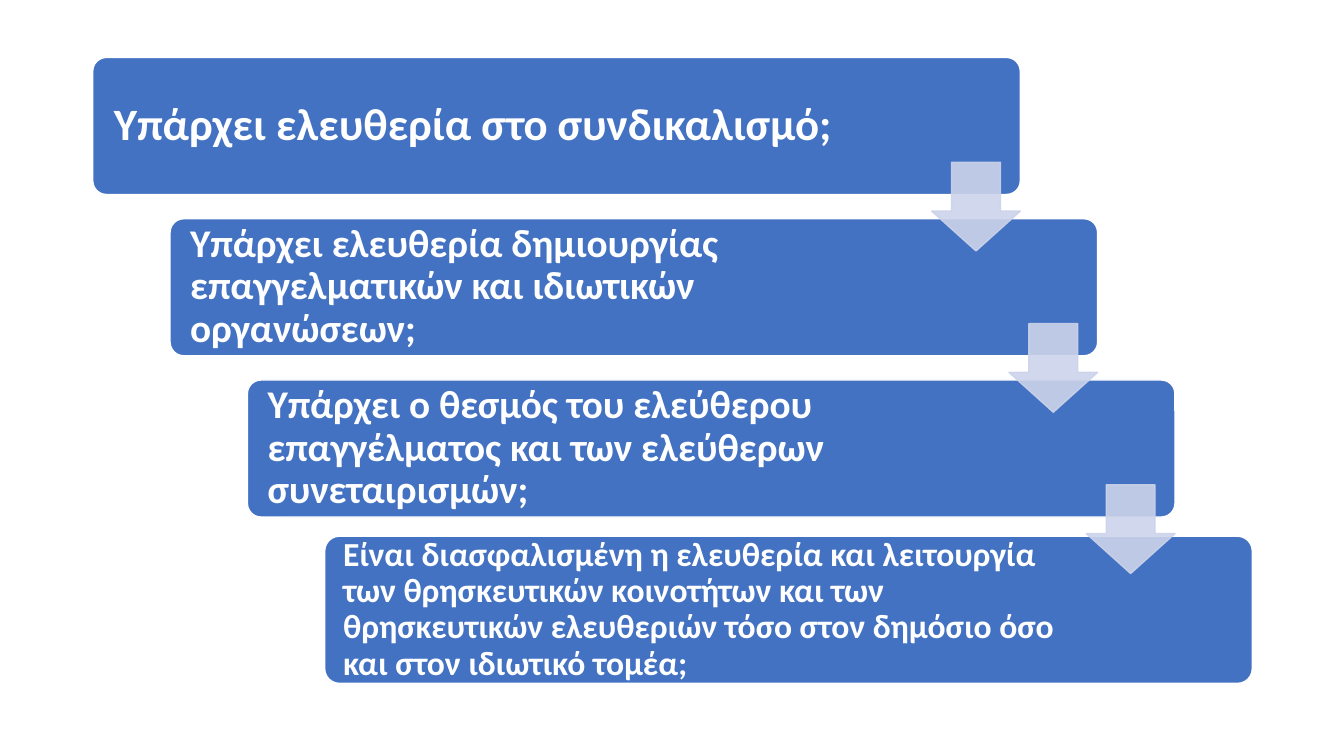
import pptx
import pptx.util
import pptx.dml.color
import pptx.enum.shapes
import pptx.enum.text
import lxml.etree
from pptx.oxml.ns import qn

Inches, Pt = pptx.util.Inches, pptx.util.Pt
SHAPES = pptx.enum.shapes.MSO_SHAPE
COLOURS = {"step": "4372C3", "arrow": "CCD3EA", "white": "FFFFFF"}

# question, font size, box height, inset, text width
QUESTIONS = [
    ("Υπάρχει ελευθερία στο συνδικαλισμό;", 32, 1.36, 0.13, 7.62),
    ("Υπάρχει ελευθερία δημιουργίας επαγγελματικών και ιδιωτικών οργανώσεων;",
     28, 1.36, 0.12, 7.47),
    ("Υπάρχει ο θεσμός του ελεύθερου επαγγέλματος και των ελεύθερων "
     "συνεταιρισμών;", 28, 1.36, 0.12, 7.48),
    ("Είναι διασφαλισμένη η ελευθερία και λειτουργία των θρησκευτικών "
     "κοινοτήτων και των θρησκευτικών ελευθεριών τόσο στον δημόσιο όσο και "
     "στον ιδιωτικό τομέα;", 24, 1.46, 0.1, 7.46),
]
LEFT, CENTRE = 0.92, 1.25
SHIFT, DROP = 0.767, 1.6
STEP_WIDTH, TEXT_MARGIN = 9.2, 0.04
ARROW_SIZE = 0.88


def colour(name):
    return pptx.dml.color.RGBColor.from_string(COLOURS[name])


def add_block(kind, left, top, width, height, fill, line):
    block = slide.shapes.add_shape(
        kind, Inches(left), Inches(top), Inches(width), Inches(height))
    block.shadow.inherit = False
    block.fill.solid()
    block.fill.fore_color.rgb = colour(fill)
    block.line.color.rgb = colour(line)
    block.line.width = Pt(1)
    return block


deck = pptx.Presentation()
deck.slide_width, deck.slide_height = Inches(13.33), Inches(7.5)
slide = deck.slides.add_slide(deck.slide_layouts[6])

# Staircase of questions
for index, (question, size, height, inset, text_width) in enumerate(QUESTIONS):
    step = add_block(SHAPES.ROUNDED_RECTANGLE, LEFT + index * SHIFT,
                     CENTRE + index * DROP - height / 2, STEP_WIDTH, height,
                     "step", "white")
    step.adjustments[0] = 0.1
    frame = step.text_frame
    frame.word_wrap = True
    frame.vertical_anchor = pptx.enum.text.MSO_ANCHOR.MIDDLE
    frame.margin_left = Inches(TEXT_MARGIN + inset)
    frame.margin_right = Inches(STEP_WIDTH - TEXT_MARGIN - text_width + inset)
    frame.margin_top = frame.margin_bottom = Inches(0)
    frame.text = question
    paragraph = frame.paragraphs[0]
    paragraph.alignment = pptx.enum.text.PP_ALIGN.LEFT
    paragraph.line_spacing = 0.9
    font = paragraph.runs[0].font
    font.name, font.size, font.bold = "Calibri", Pt(size), True
    font.color.rgb = colour("white")

# Translucent arrows at the right end of each step
for index in range(len(QUESTIONS) - 1):
    arrow = add_block(SHAPES.DOWN_ARROW,
                      LEFT + index * SHIFT + STEP_WIDTH - ARROW_SIZE,
                      1.61 + index * DROP, ARROW_SIZE, ARROW_SIZE,
                      "arrow", "arrow")
    arrow.adjustments[0], arrow.adjustments[1] = 0.55, 0.45
    for tint in arrow.element.spPr.iter(qn("a:srgbClr")):
        lxml.etree.SubElement(tint, qn("a:alpha"), val="90000")

deck.save("out.pptx")
